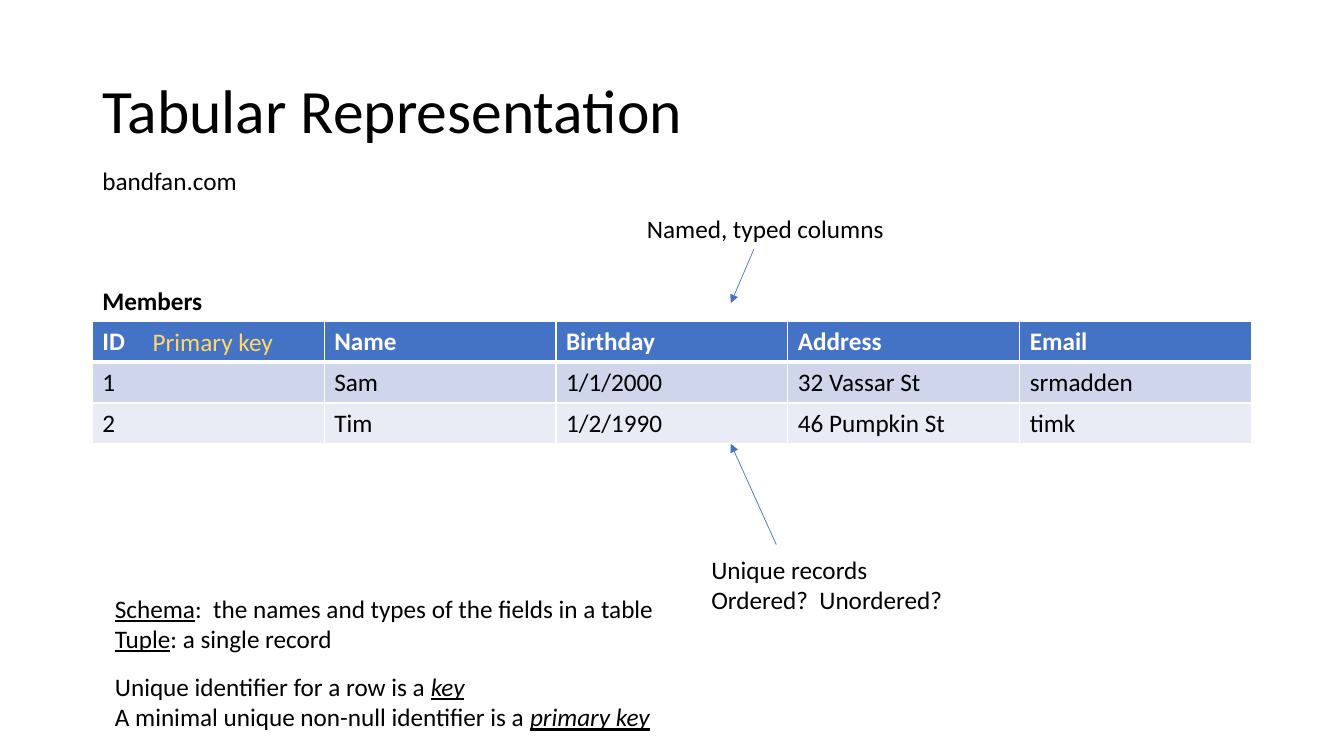
from lxml import etree
from pptx import Presentation
from pptx.dml.color import RGBColor
from pptx.enum.shapes import MSO_CONNECTOR
from pptx.enum.text import MSO_ANCHOR, MSO_AUTO_SIZE, PP_ALIGN
from pptx.oxml.ns import qn
from pptx.util import Pt

STRAIGHT = MSO_CONNECTOR.STRAIGHT
MIDDLE = MSO_ANCHOR.MIDDLE
NO_AUTOFIT = MSO_AUTO_SIZE.NONE
LEFT = PP_ALIGN.LEFT
TITLE_ONLY = 5

COLORS = {
    "text": "000000",
    "white": "FFFFFF",
    "accent": "4472C4",
    "odd row": "CFD5EA",
    "even row": "E9EBF5",
    "key": "FFD966",
}

MEMBERS = [
    ["ID", "Name", "Birthday", "Address", "Email"],
    ["1", "Sam", "1/1/2000", "32 Vassar St", "srmadden"],
    ["2", "Tim", "1/2/1990", "46 Pumpkin St", "timk"],
]

UNDERLINED = {"underline": True}
TERM = {"underline": True, "italic": True}

# Each label: left, top, width, height, then its paragraphs of (text, format) spans
LABELS = [
    (66, 114.5, 217, 29, [[("bandfan.com", {})]]),
    (455, 149, 275, 29, [[("Named, typed columns", {})]]),
    (501, 392.5, 275, 73, [
        [("Unique records", {})],
        [("Ordered?  Unordered?", {})],
    ]),
    (75, 420, 488, 51, [
        [("Schema", UNDERLINED), (":  the names and types of the fields in a table", {})],
        [("Tuple", UNDERLINED), (": a single record", {})],
    ]),
    (75, 476, 518, 51, [
        [("Unique identifier for a row is a ", {}), ("key", TERM)],
        [("A minimal unique non-null identifier is a ", {}), ("primary key", TERM)],
    ]),
    (102, 229.5, 181, 29, [[("Primary key", {"color": "key"})]]),
]


class SlideBuilder:
    font_name = "Calibri"
    font_size = 18

    def __init__(self, page):
        self.page = page

    def color(self, name):
        return RGBColor.from_string(COLORS[name])

    def add_span(self, para, text, color="text", **formats):
        span = para.add_run()
        span.text = text
        settings = {"name": self.font_name, "size": Pt(self.font_size), **formats}
        for key, value in settings.items():
            setattr(span.font, key, value)
        span.font.color.rgb = self.color(color)

    def title(self, text, left, top, width, height):
        box = self.page.shapes.title
        bounds = {"left": left, "top": top, "width": width, "height": height}
        for key, value in bounds.items():
            setattr(box, key, Pt(value))
        frame = box.text_frame
        frame.auto_size = NO_AUTOFIT
        frame.vertical_anchor = MIDDLE
        para = frame.paragraphs[0]
        para.alignment = LEFT
        para.line_spacing = 0.9
        self.add_span(para, text, size=Pt(44))

    def label(self, left, top, width, height, paragraphs, wrap=True):
        box = self.page.shapes.add_textbox(Pt(left), Pt(top), Pt(width), Pt(height))
        frame = box.text_frame
        frame.word_wrap = wrap
        for index, spans in enumerate(paragraphs):
            para = frame.add_paragraph() if index else frame.paragraphs[0]
            for text, formats in spans:
                self.add_span(para, text, **formats)

    def arrow(self, start_x, start_y, end_x, end_y):
        arrow = self.page.shapes.add_connector(
            STRAIGHT, Pt(start_x), Pt(start_y), Pt(end_x), Pt(end_y))
        arrow.line.color.rgb = self.color("accent")
        arrow.line.width = Pt(0.5)
        properties = arrow._element.spPr
        etree.SubElement(properties.find(qn("a:ln")), qn("a:tailEnd"), type="triangle")
        etree.SubElement(properties, qn("a:effectLst"))

    def cell_borders(self, cell, widths):
        """Draw white borders; widths maps the sides L, R, T, B to points."""
        properties = cell._tc.get_or_add_tcPr()
        for side, width in widths.items():
            line = etree.SubElement(properties, qn(f"a:ln{side}"), w=str(Pt(width)))
            fill = etree.SubElement(line, qn("a:solidFill"))
            etree.SubElement(fill, qn("a:srgbClr"), val=COLORS["white"])

    def table(self, left, top, width, row_height, rows):
        table = self.page.shapes.add_table(
            len(rows), len(rows[0]), Pt(left), Pt(top),
            Pt(width), Pt(row_height * len(rows))).table
        fills = ["accent", "odd row", "even row"]
        for row_index, values in enumerate(rows):
            header = row_index == 0
            table.rows[row_index].height = Pt(row_height)
            widths = {"L": 1, "R": 1, "T": 3 if row_index == 1 else 1,
                      "B": 3 if header else 1}
            for column_index, value in enumerate(values):
                cell = table.cell(row_index, column_index)
                self.cell_borders(cell, widths)
                cell.fill.solid()
                cell.fill.fore_color.rgb = self.color(fills[row_index])
                self.add_span(cell.text_frame.paragraphs[0], value,
                              color="white" if header else "text", bold=header)


def main():
    deck = Presentation()
    deck.slide_width, deck.slide_height = Pt(960), Pt(540)
    builder = SlideBuilder(deck.slides.add_slide(deck.slide_layouts[TITLE_ONLY]))
    builder.title("Tabular Representation", 66, 28.75, 828, 104.4)
    builder.table(66, 229.5, 828, 29.2, MEMBERS)
    builder.label(66, 200.5, 86, 29, [[("Members", {"bold": True})]], wrap=False)
    for label in LABELS:
        builder.label(*label)
    builder.arrow(538.5, 178, 522, 216.5)
    builder.arrow(554.5, 389, 522, 317)
    deck.save("out.pptx")


if __name__ == "__main__":
    main()
